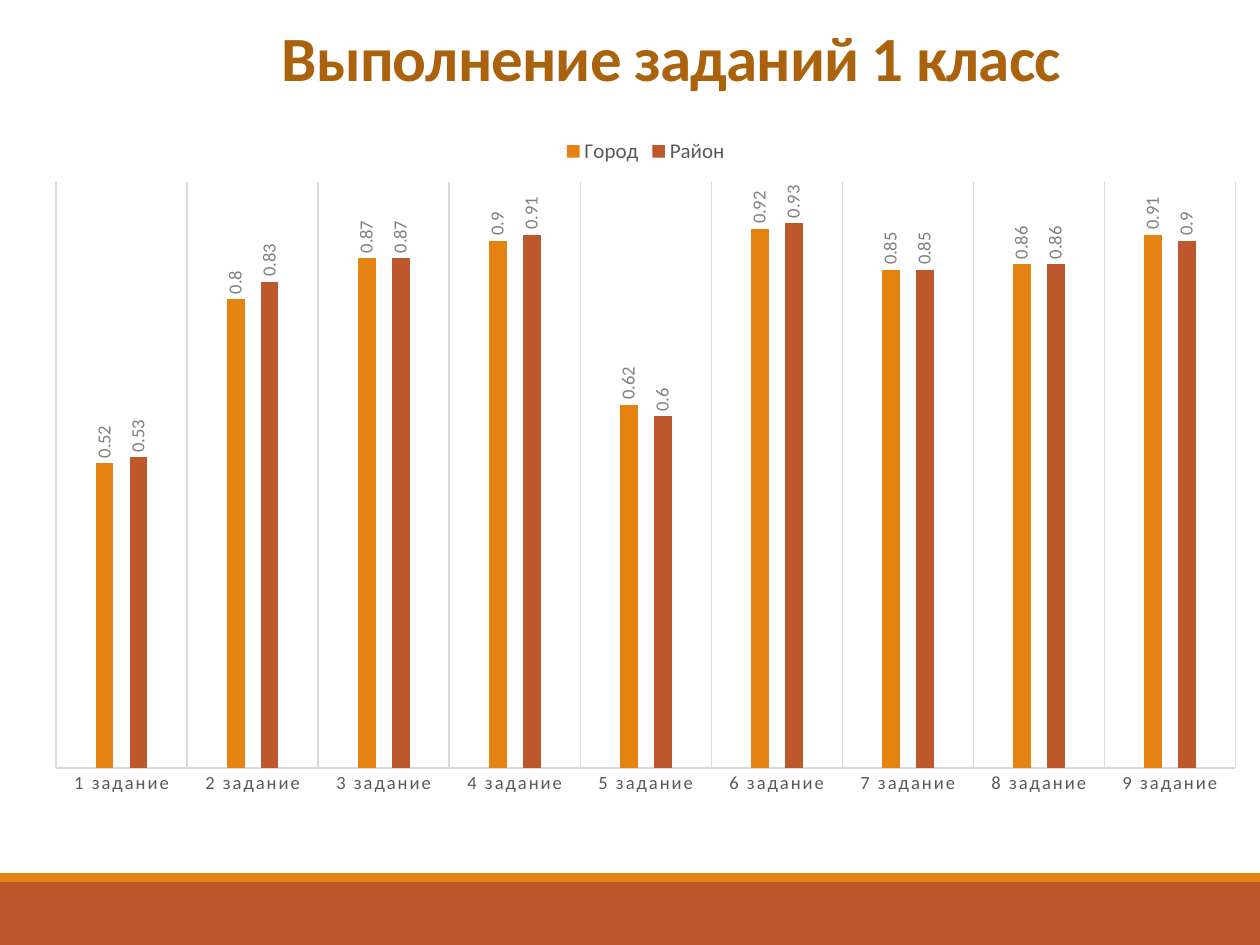
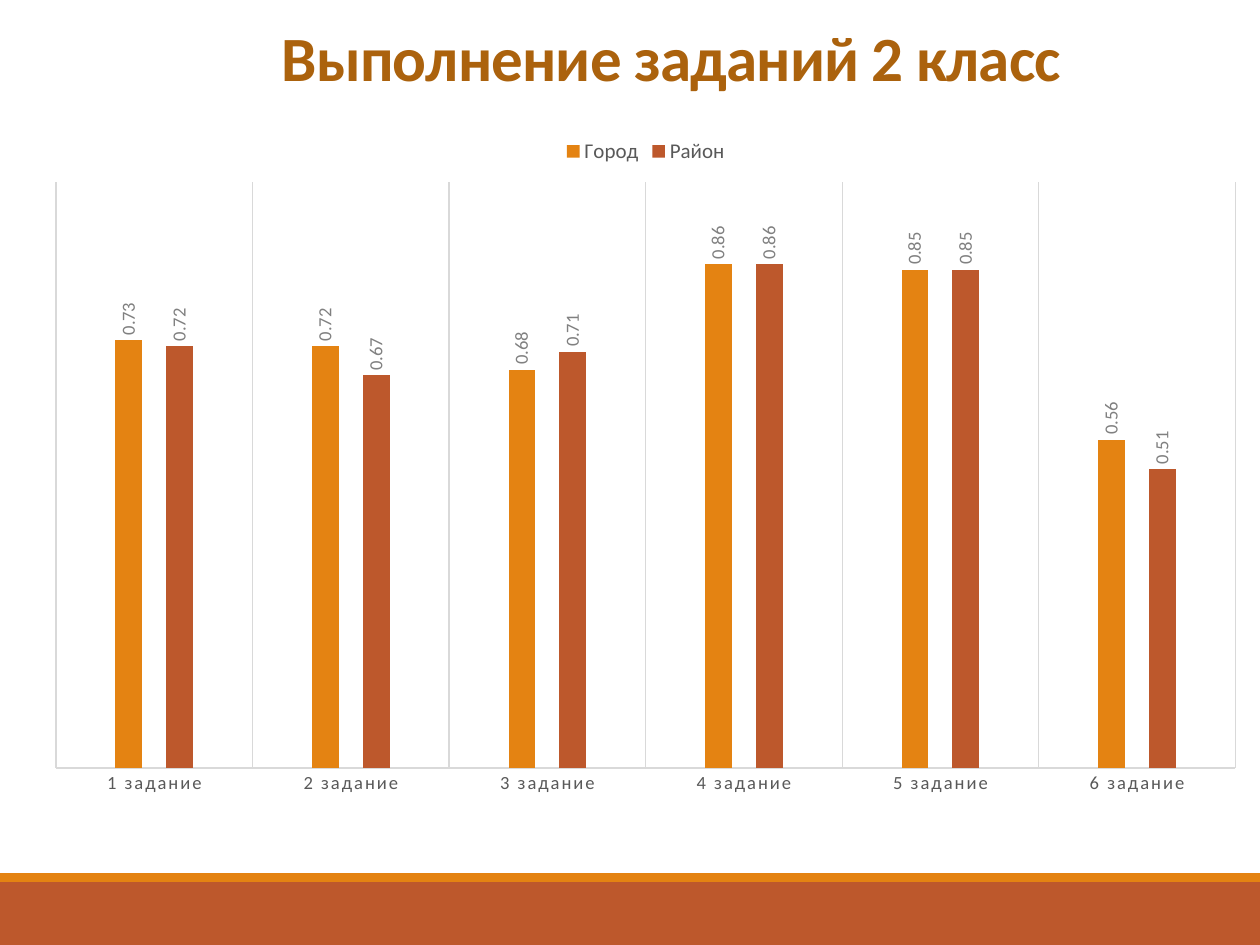
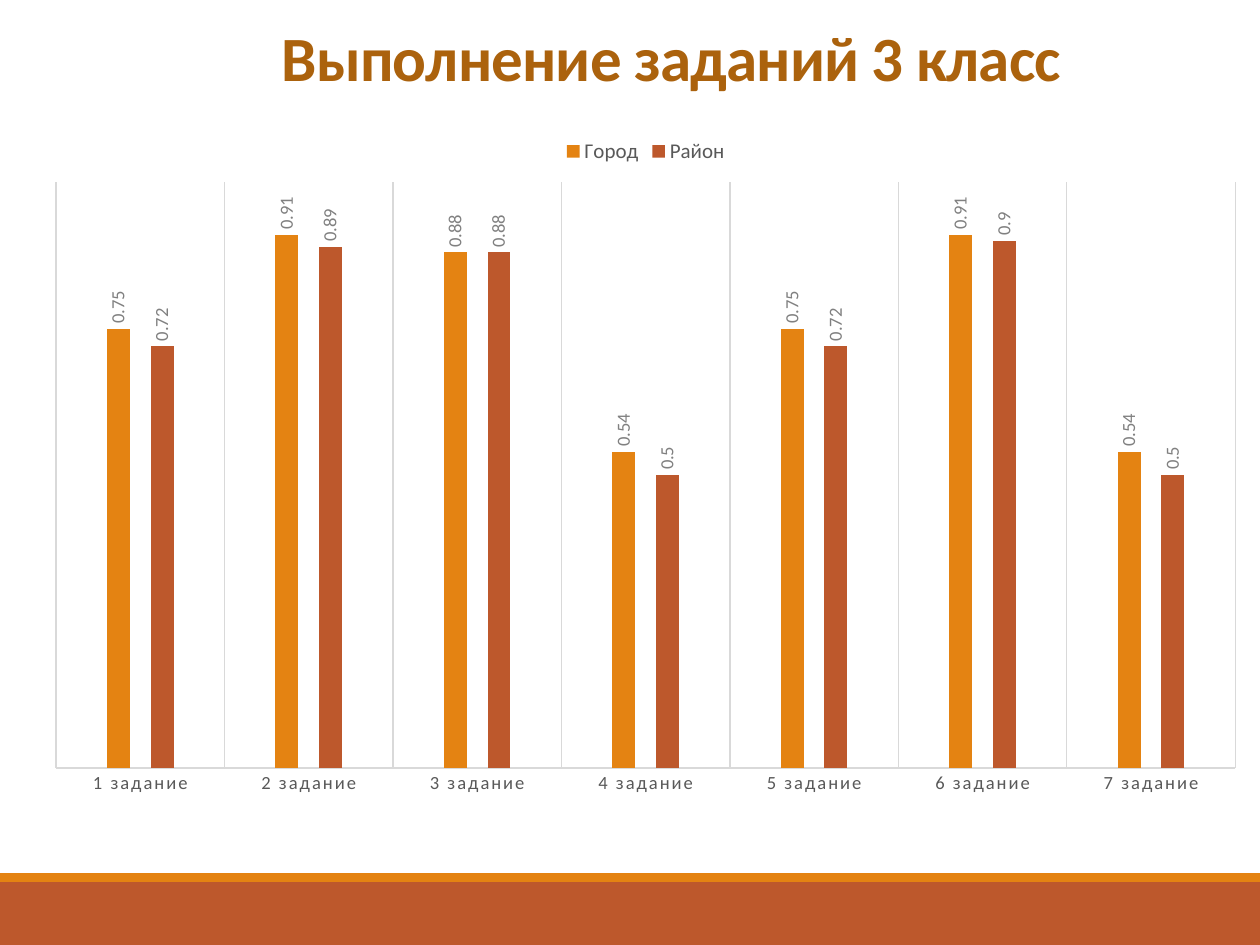
from pptx import Presentation
from pptx.chart import data
from pptx.dml import color
from pptx.enum import chart as kinds, shapes, text
from pptx.oxml import ns, parse_xml
from pptx.util import Pt

HUES = {
    "city": "E48312", "area": "BD582C", "title": "AB620D",
    "text": "595959", "label": "808080", "rule": "D9D9D9", "base": "000000",
}
WIDE, HIGH = 720, 540
FACE = "Calibri"

# Values by class: city, then area
MARKS = {
    1: ([0.52, 0.8, 0.87, 0.9, 0.62, 0.92, 0.85, 0.86, 0.91],
        [0.53, 0.83, 0.87, 0.91, 0.6, 0.93, 0.85, 0.86, 0.9]),
    2: ([0.73, 0.72, 0.68, 0.86, 0.85, 0.56],
        [0.72, 0.67, 0.71, 0.86, 0.85, 0.51]),
    3: ([0.75, 0.91, 0.88, 0.54, 0.75, 0.91, 0.54],
        [0.72, 0.89, 0.88, 0.5, 0.72, 0.9, 0.5]),
}


class Deck:
    def __init__(self):
        self.prs = Presentation()
        self.prs.slide_width, self.prs.slide_height = Pt(WIDE), Pt(HIGH)
        self.slide = None

    def hue(self, name):
        return color.RGBColor.from_string(HUES[name])

    def style(self, font, size, hue, bold=False):
        font.name, font.size, font.bold = FACE, Pt(size), bold
        font.color.rgb = self.hue(hue)

    def rule(self, line):
        line.width = Pt(0.75)
        line.color.rgb = self.hue("rule")

    def start(self):
        self.slide = self.prs.slides.add_slide(self.prs.slide_layouts[5])
        self.band(504, 36, "area")
        self.band(499, 5, "city")

    def band(self, top, height, hue):
        bar = self.slide.shapes.add_shape(
            shapes.MSO_SHAPE.RECTANGLE, 0, Pt(top), Pt(WIDE), Pt(height))
        bar.shadow.inherit = False
        bar.fill.solid()
        bar.fill.fore_color.rgb = self.hue(hue)
        bar.line.fill.background()

    def title(self, words):
        box = self.slide.shapes.title
        box.left, box.top, box.width, box.height = map(Pt, (86.4, 13, 594, 44.6))
        frame = box.text_frame
        frame.word_wrap = True
        frame.auto_size = text.MSO_AUTO_SIZE.NONE
        frame.vertical_anchor = text.MSO_ANCHOR.BOTTOM
        par = frame.paragraphs[0]
        par.alignment = text.PP_ALIGN.CENTER
        par.line_spacing = 0.85
        run = par.add_run()
        run.text = words
        self.style(run.font, 36, "title", True)
        run._r.get_or_add_rPr().set("spc", "-50")

    def chart(self, city, area):
        table = data.CategoryChartData()
        table.categories = [f"{n} задание" for n in range(1, len(city) + 1)]
        table.add_series("Город", city)
        table.add_series("Район", area)
        chart = self.slide.shapes.add_chart(
            kinds.XL_CHART_TYPE.COLUMN_CLUSTERED,
            Pt(18), Pt(71.3), Pt(702), Pt(391), table).chart
        self.style(chart.font, 10, "base")
        chart.has_title = False

        # Legend
        chart.has_legend = True
        chart.legend.position = kinds.XL_LEGEND_POSITION.TOP
        chart.legend.include_in_layout = False
        self.style(chart.legend.font, 12, "text")

        # Axes
        axis = chart.category_axis
        axis.major_tick_mark = axis.minor_tick_mark = kinds.XL_TICK_MARK.NONE
        axis.has_major_gridlines = True
        self.rule(axis.major_gridlines.format.line)
        self.rule(axis.format.line)
        self.style(axis.tick_labels.font, 10.6, "text")
        axis._element.find(".//" + ns.qn("a:defRPr")).set("spc", "120")
        scale = chart.value_axis
        scale.minimum_scale, scale.maximum_scale = 0, 1
        scale.has_major_gridlines = False
        scale.visible = False

        # Columns and upright labels
        plot = chart.plots[0]
        plot.gap_width, plot.overlap = 444, -90
        plot.vary_by_categories = False
        for series, hue in zip(plot.series, ("city", "area")):
            series.format.fill.solid()
            series.format.fill.fore_color.rgb = self.hue(hue)
            labels = series.data_labels
            labels.show_value = True
            labels.position = kinds.XL_LABEL_POSITION.OUTSIDE_END
            self.style(labels.font, 10.6, "label")
            body = labels._element.find(".//" + ns.qn("a:bodyPr"))
            body.set("rot", "-5400000")
            body.set("vert", "horz")
        self.place(chart)

    def place(self, chart):
        # Fixed inner plot area, as shares of the chart
        area = chart._chartSpace.find(".//" + ns.qn("c:plotArea"))
        old = area.find(ns.qn("c:layout"))
        if old is not None:
            area.remove(old)
        sides = {"x": 0.02, "y": 0.084, "w": 0.96, "h": 0.856}
        parts = "".join(f'<c:{k}Mode val="edge"/>' for k in "xy")
        parts += "".join(f'<c:{k} val="{v}"/>' for k, v in sides.items())
        area.insert(0, parse_xml(
            f'<c:layout {ns.nsdecls("c")}><c:manualLayout>'
            f'<c:layoutTarget val="inner"/>{parts}</c:manualLayout></c:layout>'))


def main():
    deck = Deck()
    for grade, (city, area) in MARKS.items():
        deck.start()
        deck.title(f"Выполнение заданий {grade} класс")
        deck.chart(city, area)
    deck.prs.save("out.pptx")


if __name__ == "__main__":
    main()
